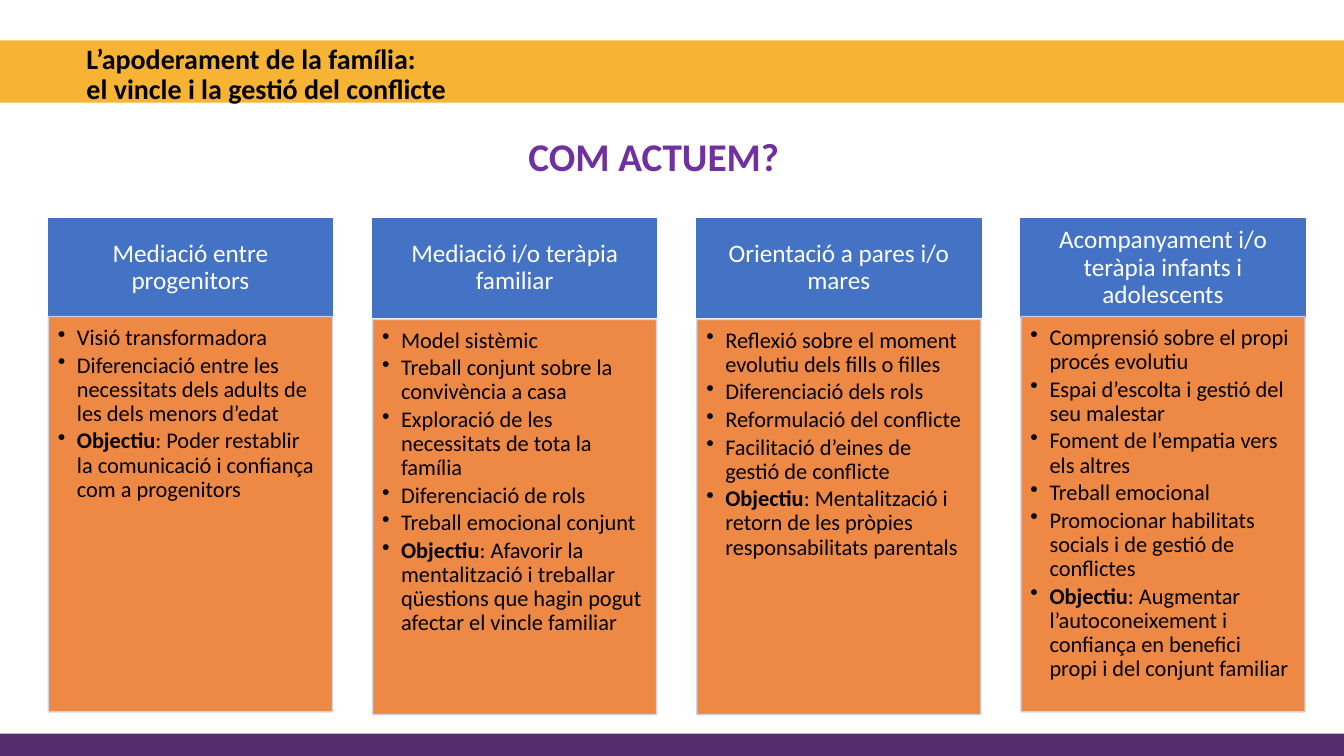
import pptx
import pptx.dml.color
import pptx.enum.shapes
import pptx.enum.text
import pptx.oxml
import pptx.oxml.ns
import pptx.util
from pptx.util import Cm, Pt

RGBColor = pptx.dml.color.RGBColor
ANCHOR = pptx.enum.text.MSO_ANCHOR
ALIGN = pptx.enum.text.PP_ALIGN

GOLD = RGBColor(0xF7, 0xB3, 0x34)
PLUM = RGBColor(0x54, 0x2C, 0x6E)
VIOLET = RGBColor(0x70, 0x30, 0xA0)
BLUE = RGBColor(0x44, 0x72, 0xC4)
ORANGE = RGBColor(0xED, 0x7D, 0x31)
PALE = RGBColor(0xCF, 0xD5, 0xEA)
WHITE = RGBColor(0xFF, 0xFF, 0xFF)
BLACK = RGBColor(0, 0, 0)

# Header, top of the list box, points, goal
COLUMNS = [
    ("Mediació entre progenitors", 7.98,
     ["Visió transformadora",
      "Diferenciació entre les necessitats dels adults de les dels menors d’edat"],
     "Poder restablir la comunicació i confiança com a progenitors"),
    ("Mediació i/o teràpia familiar", 8.05,
     ["Model sistèmic",
      "Treball conjunt sobre la convivència a casa",
      "Exploració de les necessitats de tota la família",
      "Diferenciació de rols",
      "Treball emocional conjunt"],
     "Afavorir la mentalització i treballar qüestions que hagin pogut "
     "afectar el vincle familiar"),
    ("Orientació a pares i/o mares", 8.05,
     ["Reflexió sobre el moment evolutiu dels fills o filles",
      "Diferenciació dels rols",
      "Reformulació del conflicte",
      "Facilitació d’eines de gestió de conflicte"],
     "Mentalització i retorn de les pròpies responsabilitats parentals"),
    ("Acompanyament i/o teràpia infants i adolescents", 7.98,
     ["Comprensió sobre el propi procés evolutiu",
      "Espai d’escolta i gestió del seu malestar",
      "Foment de l’empatia vers els altres",
      "Treball emocional",
      "Promocionar habilitats socials i de gestió de conflictes"],
     "Augmentar l’autoconeixement i confiança en benefici propi i del "
     "conjunt familiar"),
]
LEFT, STEP, WIDTH = 1.22, 8.17, 7.16

deck = pptx.Presentation()
deck.slide_width, deck.slide_height = Cm(33.87), Cm(19.05)
slide = deck.slides.add_slide(deck.slide_layouts[6])


def block(left, top, width, height, fill, line=None):
    """Add a flat rectangle, with an outline if a line colour is given."""
    shape = slide.shapes.add_shape(
        pptx.enum.shapes.MSO_SHAPE.RECTANGLE,
        Cm(left), Cm(top), Cm(width), Cm(height))
    shape.shadow.inherit = False
    shape.fill.solid()
    shape.fill.fore_color.rgb = fill
    if line is None:
        shape.line.fill.background()
    else:
        shape.line.color.rgb = line
        shape.line.width = Pt(1)
    return shape


def style(para, size, color, bold=False):
    """Format every run of a paragraph."""
    for run in para.runs:
        run.font.name = "Calibri"
        run.font.size = Pt(size)
        run.font.color.rgb = color
        run.font.bold = bold


block(-0.1, 1.02, 34.1, 1.57, GOLD)
block(0, 18.49, 33.87, 0.56, PLUM)

title = slide.shapes.add_textbox(Cm(1.93), Cm(1.02), Cm(19.53), Cm(1.83))
title.text_frame.word_wrap = True
para = title.text_frame.paragraphs[0]
para.text = "L’apoderament de la família:\vel vincle i la gestió del conflicte"
para.line_spacing = 0.9
style(para, 20, BLACK, True)

prompt = slide.shapes.add_textbox(Cm(12.98), Cm(3.2), Cm(6.99), Cm(1.45))
prompt.text_frame.word_wrap = True
para = prompt.text_frame.paragraphs[0]
para.text = "COM ACTUEM?"
para.alignment = ALIGN.CENTER
style(para, 28, VIOLET, True)

for i, (name, top, points, goal) in enumerate(COLUMNS):
    left = LEFT + i * STEP

    head = block(left, 5.5, WIDTH, 2.51, BLUE, BLUE)
    frame = head.text_frame
    frame.word_wrap = True
    frame.vertical_anchor = ANCHOR.MIDDLE
    frame.margin_left = frame.margin_right = Cm(0.36)
    frame.margin_top = frame.margin_bottom = Cm(0.2)
    para = frame.paragraphs[0]
    para.text = name
    para.alignment = ALIGN.CENTER
    para.line_spacing = 0.9
    style(para, 18, WHITE)

    body = block(left, top, WIDTH, 9.96, ORANGE, PALE)
    for paint in (body.fill, body.line.fill):
        tint = paint.fore_color
        clr = paint._xPr.find(pptx.oxml.ns.qn("a:solidFill"))[0]
        pptx.oxml.ns.qn("a:alpha")
        clr.append(pptx.oxml.parse_xml(
            '<a:alpha %s val="90000"/>' % pptx.oxml.ns.nsdecls("a")))
    frame = body.text_frame
    frame.word_wrap = True
    frame.vertical_anchor = ANCHOR.TOP
    frame.margin_left = frame.margin_top = Cm(0.24)
    frame.margin_right, frame.margin_bottom = Cm(0.32), Cm(0.36)
    for n, text in enumerate(points + ["Objectiu"]):
        para = frame.paragraphs[0] if n == 0 else frame.add_paragraph()
        para.text = text
        props = para._p.get_or_add_pPr()
        props.set("marL", str(Cm(0.48)))
        props.set("indent", str(-Cm(0.48)))
        props.append(pptx.oxml.parse_xml(
            '<a:buChar %s char="•"/>' % pptx.oxml.ns.nsdecls("a")))
        para.alignment = ALIGN.LEFT
        para.line_spacing = 0.9
        para.space_after = Pt(2.4)
        if n == len(points):
            para.add_run().text = ": " + goal
        style(para, 16, BLACK)
    para.runs[0].font.bold = True

deck.save("out.pptx")
